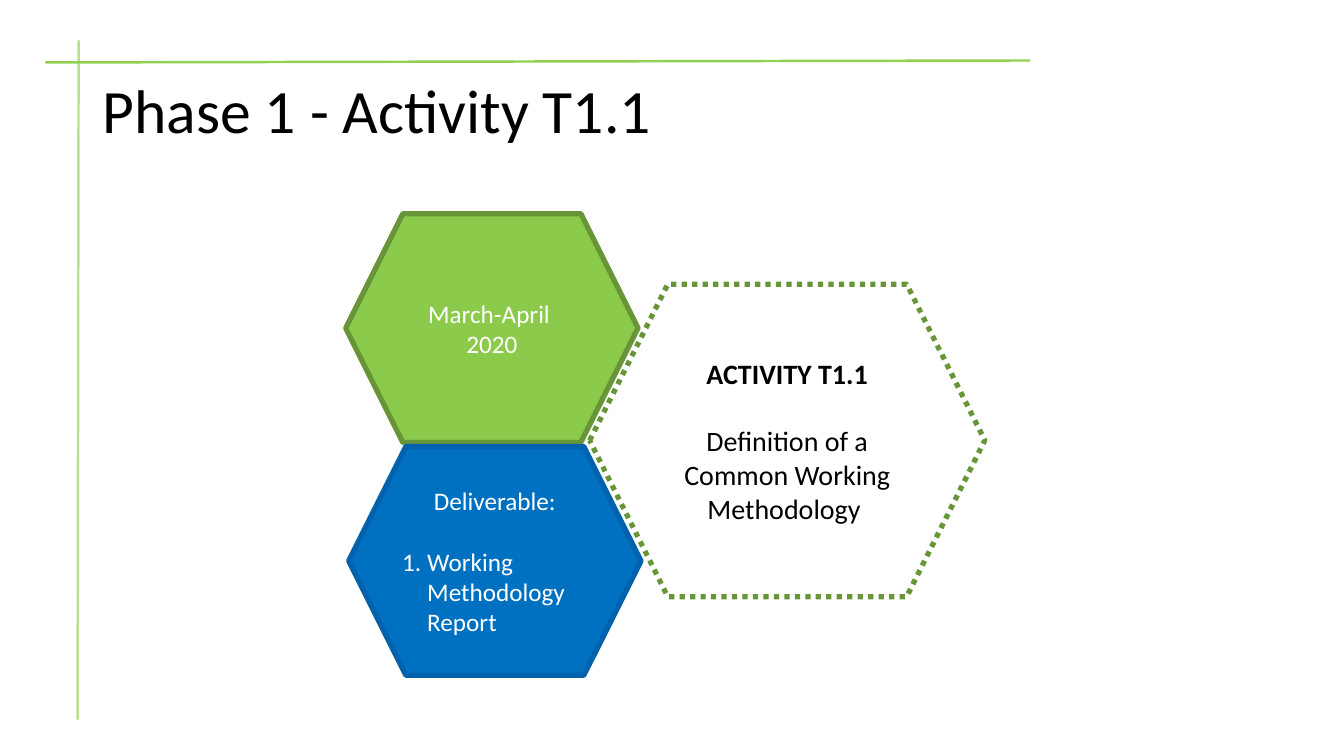
from lxml import etree
from pptx import Presentation
from pptx.dml.color import RGBColor
from pptx.enum.dml import MSO_LINE
from pptx.enum.shapes import MSO_CONNECTOR, MSO_SHAPE
from pptx.enum.text import MSO_ANCHOR, PP_ALIGN
from pptx.oxml.ns import qn
from pptx.util import Pt

HEXAGON, STRAIGHT = MSO_SHAPE.HEXAGON, MSO_CONNECTOR.STRAIGHT
DOTTED = MSO_LINE.ROUND_DOT  # stored as sysDot
MIDDLE, CENTER, LEFT = MSO_ANCHOR.MIDDLE, PP_ALIGN.CENTER, PP_ALIGN.LEFT
FONT = "Calibri"
COLORS = {
    "black": "000000", "white": "FFFFFF",
    "pale green": "B9DF93", "lime": "92D050",
    "green": "8BCA4B", "dark green": "679537",
    "blue": "0070C0", "dark blue": "0062AC",
}

# Content
TITLE = "Phase 1 - Activity T1.1"
TITLE_BOX = (66.24, 28.8, 828, 104.4)
RULES = [  # start, end, colour
    ((56.16, 28.8), (55.44, 514.08), "pale green"),
    ((32.4, 44.64), (735.84, 43.2), "lime"),
]
SMALL, LARGE = (208.8, 163.44), (282.24, 223.2)
HEXAGONS = [
    dict(at=(421.2, 203.04), size=LARGE, fill=None, border="dark green", dash=DOTTED,
         points=20, color="black", lines=[
             ("ACTIVITY T1.1", dict(bold=True)),
             ("Definition of a Common Working Methodology ", dict(before=24.4)),
         ]),
    dict(at=(246.96, 152.64), size=SMALL, fill="green", border="dark green", dash=None,
         points=18, color="white", lines=[("March-April ", {}), ("2020", {})]),
    dict(at=(249.12, 318.96), size=SMALL, fill="blue", border="dark blue", dash=None,
         points=18, color="white", lines=[
             ("Deliverable:", {}),
             ("Working Methodology Report", dict(before=22, align=LEFT, numbered=True)),
         ]),
]


def rgb(name):
    return RGBColor.from_string(COLORS[name])


def write(paragraph, text, *, points, color, bold=False, align=CENTER,
          before=0, spacing=None, numbered=False):
    paragraph.alignment = align
    if before:
        paragraph.space_before = Pt(before)
    if spacing:
        paragraph.line_spacing = spacing
    if numbered:
        properties = paragraph._p.get_or_add_pPr()
        properties.set("marL", str(Pt(18)))
        properties.set("indent", str(-Pt(18)))
        etree.SubElement(properties, qn("a:buFont")).set("typeface", "+mj-lt")
        etree.SubElement(properties, qn("a:buAutoNum")).set("type", "arabicPeriod")
    run = paragraph.add_run()
    run.text = text
    run.font.name, run.font.size, run.font.bold = FONT, Pt(points), bold
    run.font.color.rgb = rgb(color)


deck = Presentation()
deck.slide_width, deck.slide_height = Pt(960), Pt(540)
slide = deck.slides.add_slide(deck.slide_layouts[6])

# Crossing rules
for start, end, color in RULES:
    rule = slide.shapes.add_connector(STRAIGHT, *map(Pt, start + end))
    rule.line.color.rgb, rule.line.width = rgb(color), Pt(1.75)
    etree.SubElement(rule._element.spPr, qn("a:effectLst"))

# Title
title = slide.shapes.add_textbox(*map(Pt, TITLE_BOX)).text_frame
title.word_wrap, title.vertical_anchor = True, MIDDLE
write(title.paragraphs[0], TITLE, points=44, color="black", align=LEFT, spacing=0.9)

# Activity, period and deliverable hexagons
for part in HEXAGONS:
    hexagon = slide.shapes.add_shape(HEXAGON, *map(Pt, part["at"] + part["size"]))
    hexagon.shadow.inherit = False
    if part["fill"]:
        hexagon.fill.solid()
        hexagon.fill.fore_color.rgb = rgb(part["fill"])
    else:
        hexagon.fill.background()
    hexagon.line.color.rgb, hexagon.line.width = rgb(part["border"]), Pt(3.75)
    if part["dash"]:
        hexagon.line.dash_style = part["dash"]
    frame = hexagon.text_frame
    frame.word_wrap, frame.vertical_anchor = True, MIDDLE
    for i, (text, style) in enumerate(part["lines"]):
        paragraph = frame.add_paragraph() if i else frame.paragraphs[0]
        write(paragraph, text, points=part["points"], color=part["color"], **style)

deck.save("out.pptx")
